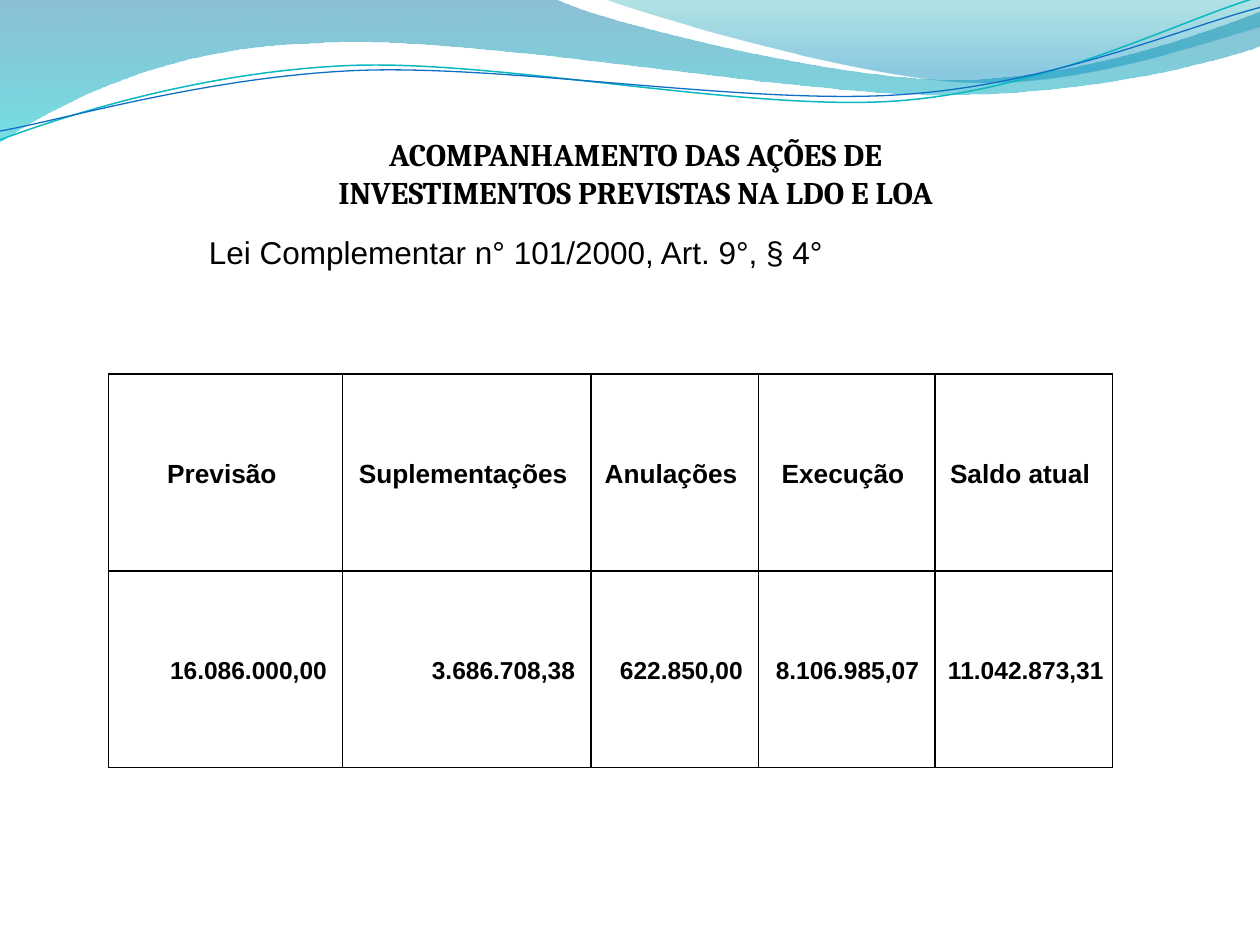
from math import cos, radians, sin
from lxml.etree import SubElement as Sub
from pptx import Presentation
from pptx.dml.color import RGBColor as Rgb
from pptx.enum.text import MSO_ANCHOR as Anchor, MSO_AUTO_SIZE as Auto, PP_ALIGN as Align
from pptx.oxml.ns import qn
from pptx.util import Inches, Pt

INK = {"black": "000000", "deep": "0074A1", "aqua": "00C6CF", "teal": "00A1A9",
       "sky": "008BBF", "green": "0AB8BF", "blue": "0F6FC6"}
BANDS = [
    ([(0, 0), (4.4, -0.01), (4.76, 0.17, 6.64, 0.63, 7.58, 0.63),
      (8.53, 0.63, 9.58, 0.26, 10, 0.09), (10.01, 0.36),
      (9.83, 0.44, 8.7, 0.76, 7.46, 0.75),
      (6.22, 0.75, 3.82, 0.28, 2.57, 0.34),
      (1.29, 0.36, 0.46, 0.83, -0.01, 1.13), (0, 0)],
     [(0, "deep", 45), (1, "aqua", 55)]),
    ([(4.79, -0.01), (5.09, 0.11, 6.82, 0.62, 7.69, 0.65),
      (8.56, 0.69, 9.61, 0.32, 10, 0.21), (10, 0), (4.79, -0.01)],
     [(0, "teal", 30), (0.8, "sky", 45)]),
]
WAVES = [
    ([(0, 1.11), (0.48, 0.93, 1.58, 0.57, 2.77, 0.52),
      (3.95, 0.47, 5.93, 0.89, 7.13, 0.8),
      (8.33, 0.71, 9.38, 0.15, 9.98, -0.02)], (4.99, 0.58), "green", 0.85),
    ([(0, 1.04), (0.47, 0.96, 1.64, 0.61, 2.83, 0.56),
      (4.03, 0.51, 5.97, 0.84, 7.17, 0.75),
      (8.36, 0.67, 9.41, 0.21, 10, 0.06)], (5, 0.59), "blue", 0.75),
]
TILT = 2.7
HEAD = ["Previsão ", "Suplementações ", "Anulações ", "Execução ", "Saldo atual "]
SUMS = ["16.086.000,00 ", "3.686.708,38 ", "622.850,00 ", "8.106.985,07 ",
        "11.042.873,31 "]
COLS = [1.86, 1.97, 1.33, 1.4, 1.41]
HIGH = 1.56


def pairs(part):
    """Split a flat part into points."""
    return list(zip(part[::2], part[1::2]))


def turn(part, hub):
    """Turn the points of a part clockwise about the hub."""
    c, s = cos(radians(TILT)), sin(radians(TILT))
    flat = []
    for x, y in pairs(part):
        dx, dy = x - hub[0], y - hub[1]
        flat += [hub[0] + dx * c - dy * s, hub[1] + dx * s + dy * c]
    return flat


def add_path(slide, parts, close):
    """Draw an outline of straight and cubic parts without shadow."""
    pts = [(Inches(x), Inches(y)) for part in parts for x, y in pairs(part)]
    pen = slide.shapes.build_freeform(*pts[0])
    pen.add_line_segments(pts[1:], close=close)
    shape = pen.convert_to_shape()
    shape.shadow.inherit = False
    lines = iter(list(shape._element.iter(qn("a:lnTo"))))
    for part in parts[1:]:
        first = next(lines)
        if len(part) == 6:
            curve = first.makeelement(qn("a:cubicBezTo"), {})
            first.addprevious(curve)
            for line in (first, next(lines), next(lines)):
                curve.append(line[0])
                line.getparent().remove(line)
    return shape


def add_band(slide, parts, stops):
    """Draw a closed band with a see-through vertical gradient."""
    shape = add_path(slide, parts, True)
    shape.line.fill.background()
    shape.fill.gradient()
    shape.fill.gradient_angle = 270
    for stop, (place, ink, alpha) in zip(shape.fill.gradient_stops, stops):
        stop.position = place
        stop.color.rgb = Rgb.from_string(INK[ink])
    tags = shape.fill._xPr.iter(qn("a:srgbClr"))
    for tag, (place, ink, alpha) in zip(tags, stops):
        Sub(tag, qn("a:alpha"), val=str(alpha * 1000))


def add_wave(slide, parts, hub, ink, width):
    """Draw an open, tilted curved line."""
    shape = add_path(slide, [turn(part, hub) for part in parts], False)
    shape.rotation = 360 - TILT
    shape.fill.background()
    shape.line.color.rgb = Rgb.from_string(INK[ink])
    shape.line.width = Pt(width)


def set_text(frame, text, size, font, bold, align):
    """Fill the first paragraph and format its runs."""
    para = frame.paragraphs[0]
    para.text = text
    para.alignment = align
    for run in para.runs:
        run.font.size, run.font.name, run.font.bold = Pt(size), font, bold
        run.font.color.rgb = Rgb.from_string(INK["black"])
    return para


def add_text(slide, box, text, font, bold, align):
    """Add a wrapping text box that fits its text."""
    frame = slide.shapes.add_textbox(*map(Inches, box)).text_frame
    frame.word_wrap = True
    frame.auto_size = Auto.SHAPE_TO_FIT_TEXT
    set_text(frame, text, 18, font, bold, align)


def add_edges(cell):
    """Give a cell thin black borders."""
    props = cell._tc.get_or_add_tcPr()
    for i, side in enumerate(("lnL", "lnR", "lnT", "lnB")):
        line = props.makeelement(qn("a:" + side), {"w": str(Pt(1))})
        fill = Sub(line, qn("a:solidFill"))
        Sub(fill, qn("a:srgbClr"), val=INK["black"])
        props.insert(i, line)


def add_grid(slide, left, top):
    """Add the table of headings and sums."""
    size = (left, top, sum(COLS), 2 * HIGH)
    table = slide.shapes.add_table(2, len(COLS), *map(Inches, size)).table
    table.first_row = table.horz_banding = False
    for col, width in zip(table.columns, COLS):
        col.width = Inches(width)
    rows = [(HEAD, 15, Align.CENTER), (SUMS, 14, Align.RIGHT)]
    for r, (texts, points, align) in enumerate(rows):
        table.rows[r].height = Inches(HIGH)
        for c, text in enumerate(texts):
            cell = table.cell(r, c)
            cell.fill.background()
            cell.vertical_anchor = Anchor.MIDDLE
            cell.margin_left = cell.margin_right = Inches(0.07)
            cell.margin_top = cell.margin_bottom = Inches(0.01)
            para = set_text(cell.text_frame, text, points, "Arial", True, align)
            para.line_spacing = 1.15
            add_edges(cell)


def main():
    """Build and save the slide."""
    deck = Presentation()
    deck.slide_width, deck.slide_height = Inches(10), Inches(7.5)
    slide = deck.slides.add_slide(deck.slide_layouts[6])
    for band in BANDS:
        add_band(slide, *band)
    for wave in WAVES:
        add_wave(slide, *wave)
    add_text(slide, (1.41, 1.02, 7.27, 0.71),
             "ACOMPANHAMENTO DAS AÇÕES DE\nINVESTIMENTOS PREVISTAS NA LDO E LOA",
             "Cambria", True, Align.CENTER)
    add_text(slide, (1.56, 1.8, 6.41, 0.4),
             "Lei Complementar n° 101/2000, Art. 9°, § 4°",
             "Arial", False, Align.LEFT)
    add_grid(slide, 0.86, 2.97)
    deck.save("out.pptx")


if __name__ == "__main__":
    main()
